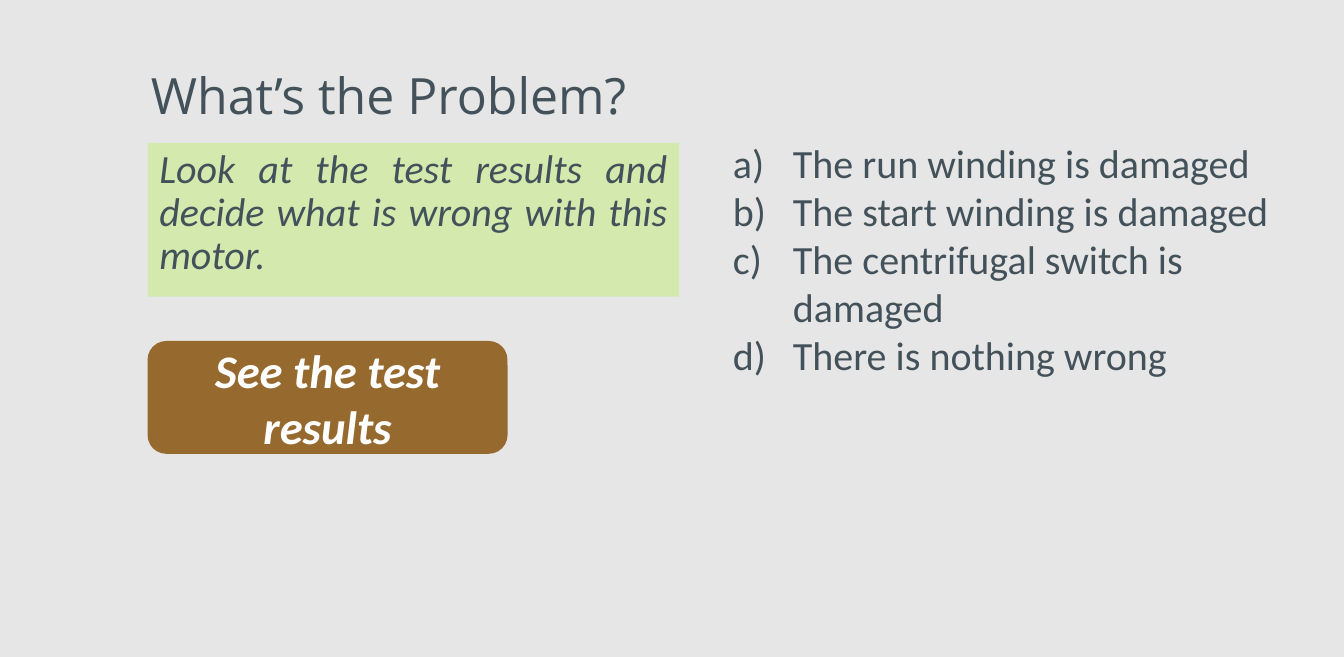
"""Build the motor quiz slide."""
from lxml import etree
from pptx import Presentation
from pptx.dml.color import RGBColor
from pptx.enum import shapes, text
from pptx.oxml import ns
from pptx import util as u

SIZE = {"slide_width": u.Inches(11.2), "slide_height": u.Pt(394)}
BACK, INK = "E7E6E6", "43525A"
RECT, ROUND = shapes.MSO_SHAPE.RECTANGLE, shapes.MSO_SHAPE.ROUNDED_RECTANGLE
TOP, MID = text.MSO_ANCHOR.TOP, text.MSO_ANCHOR.MIDDLE
BODY = {"name": "Calibri", "size": u.Pt(24)}

PARTS = [
    {"lines": ["What’s the Problem?"], "at": (1.16, 0.29, 8.39, 1.06),
     "anchor": MID, "font": {"name": "Open Sans", "size": u.Pt(30)},
     "para": {"line_spacing": 0.9}},
    {"lines": ["Look at the test results and decide what is wrong with this motor."],
     "at": (1.23, 1.19, 4.43, 1.28), "kind": RECT, "fill": "D3E9AD",
     "font": {**BODY, "italic": True},
     "para": {"alignment": text.PP_ALIGN.JUSTIFY, "line_spacing": 0.9,
              "space_before": u.Pt(7.3)}},
    {"lines": ["See the test results"], "at": (1.23, 2.84, 3, 0.94),
     "kind": ROUND, "fill": "96692F", "anchor": MID, "ink": "FFFFFF",
     "font": {"name": "Calibri", "size": u.Pt(28), "bold": True, "italic": True},
     "para": {"alignment": text.PP_ALIGN.CENTER}},
    {"lines": ["The run winding is damaged", "The start winding is damaged",
               "The centrifugal switch is damaged", "There is nothing wrong"],
     "at": (6.01, 1.1, 4.8, 2.12), "font": BODY, "indent": 0.5},
]


def paint(fill, tone):
    """Give a fill one solid colour."""
    fill.solid()
    fill.fore_color.rgb = RGBColor.from_string(tone)


def style(item, looks):
    """Set each named format value on an item."""
    for key, value in looks.items():
        setattr(item, key, value)


def letter(para, gap):
    """Number a paragraph a), b), c) with a hanging indent."""
    props = para._p.get_or_add_pPr()
    props.set("marL", str(u.Inches(gap)))
    props.set("indent", str(u.Inches(-gap)))
    mark = etree.SubElement(props, ns.qn("a:buAutoNum"))
    mark.set("type", "alphaLcParenR")


def place(slide, part):
    """Add one block of text, with a shape behind it if it has a kind."""
    box = [u.Inches(n) for n in part["at"]]
    if "kind" in part:
        shape = slide.shapes.add_shape(part["kind"], *box)
        shape.shadow.inherit = False
        shape.line.fill.background()
        paint(shape.fill, part["fill"])
    else:
        shape = slide.shapes.add_textbox(*box)
    frame = shape.text_frame
    style(frame, {"word_wrap": True, "vertical_anchor": part.get("anchor", TOP)})
    for i, line in enumerate(part["lines"]):
        para = frame.add_paragraph() if i else frame.paragraphs[0]
        style(para, {"alignment": text.PP_ALIGN.LEFT, **part.get("para", {})})
        if "indent" in part:
            letter(para, part["indent"])
        run = para.add_run()
        run.text = line
        style(run.font, part["font"])
        paint(run.font.fill, part.get("ink", INK))


def main():
    """Make the deck and save it."""
    deck = Presentation()
    style(deck, SIZE)
    slide = deck.slides.add_slide(deck.slide_layouts[6])
    paint(slide.background.fill, BACK)
    for part in PARTS:
        place(slide, part)
    deck.save("out.pptx")


if __name__ == "__main__":
    main()
